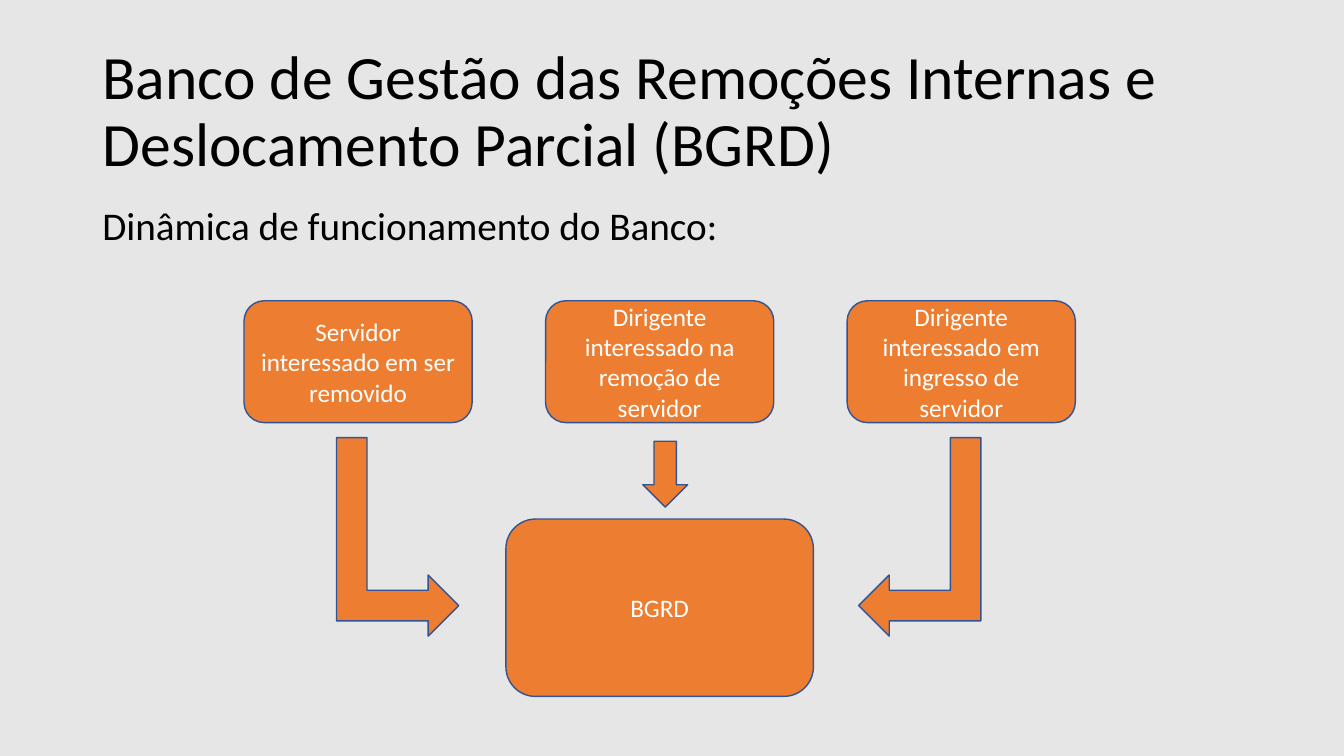
from dataclasses import dataclass

from pptx import Presentation
from pptx.dml.color import RGBColor as Rgb
from pptx.enum.shapes import MSO_SHAPE as Kind
from pptx.enum.text import MSO_ANCHOR as Anchor, PP_ALIGN as Align
from pptx.oxml.ns import qn
from pptx.shapes.autoshape import Shape
from pptx.slide import Slide
from pptx.util import Cm, Pt


@dataclass(frozen=True)
class Theme:
    font: str = "Calibri"
    back: str = "E7E6E6"
    fill: str = "ED7D31"
    line: str = "325491"
    dark: str = "000000"
    light: str = "FFFFFF"
    title: int = 44
    lead: int = 28
    label: int = 18


@dataclass(frozen=True)
class Part:
    kind: Kind
    left: float
    top: float
    width: float
    height: float
    text: str = ""
    turn: int = 0
    flip: bool = False


THEME = Theme()

# Three sources in an even row, above the bank
ROW_LEFT, ROW_STEP = 6.15, 7.6
SOURCES = (
    "Servidor interessado em ser removido",
    "Dirigente interessado na remoção de servidor",
    "Dirigente interessado em ingresso de servidor",
)
BANK = Part(Kind.ROUNDED_RECTANGLE, 12.75, 13.08, 7.75, 4.47, "BGRD")
BOXES = [
    Part(Kind.ROUNDED_RECTANGLE, ROW_LEFT + i * ROW_STEP, 7.58, 5.75, 3.07, text)
    for i, text in enumerate(SOURCES)
]

# Arrows from the sources to the bank
ARROWS = [
    Part(Kind.BENT_UP_ARROW, 7.52, 11.99, 5, 3.08, turn=90),
    Part(Kind.BENT_UP_ARROW, 20.68, 11.99, 5, 3.08, turn=270, flip=True),
    Part(Kind.DOWN_ARROW, 16.2, 11.12, 1.13, 1.66),
]


def write(shape: Shape, text: str, size: int, color: str,
          align: Align, anchor: Anchor, gap: float = 1, before: int = 0) -> None:
    frame = shape.text_frame
    frame.word_wrap = True
    frame.vertical_anchor = anchor
    para = frame.paragraphs[0]
    para.alignment = align
    para.line_spacing = gap
    para.space_before = Pt(before)
    run = para.add_run()
    run.text = text
    run.font.name = THEME.font
    run.font.size = Pt(size)
    run.font.color.rgb = Rgb.from_string(color)


def draw(slide: Slide, part: Part) -> None:
    shape = slide.shapes.add_shape(
        part.kind, Cm(part.left), Cm(part.top), Cm(part.width), Cm(part.height))
    shape.shadow.inherit = False
    shape.fill.solid()
    shape.fill.fore_color.rgb = Rgb.from_string(THEME.fill)
    shape.line.color.rgb = Rgb.from_string(THEME.line)
    shape.line.width = Pt(1)
    shape.rotation = part.turn
    if part.flip:
        shape.element.spPr.find(qn("a:xfrm")).set("flipH", "1")
    if part.text:
        write(shape, part.text, THEME.label, THEME.light, Align.CENTER, Anchor.MIDDLE)


def main() -> None:
    deck = Presentation()
    deck.slide_width, deck.slide_height = Cm(33.87), Cm(19.05)
    slide = deck.slides.add_slide(deck.slide_layouts.get_by_name("Title Only"))
    slide.background.fill.solid()
    slide.background.fill.fore_color.rgb = Rgb.from_string(THEME.back)

    # Title and lead line
    title = slide.shapes.title
    title.left, title.top = Cm(2.33), Cm(1.01)
    title.width, title.height = Cm(29.21), Cm(3.68)
    write(title, "Banco de Gestão das Remoções Internas e Deslocamento Parcial (BGRD)",
          THEME.title, THEME.dark, Align.LEFT, Anchor.MIDDLE, 0.9)
    lead = slide.shapes.add_textbox(Cm(2.33), Cm(5.07), Cm(29.21), Cm(12.09))
    write(lead, "Dinâmica de funcionamento do Banco:",
          THEME.lead, THEME.dark, Align.LEFT, Anchor.TOP, 0.9, 10)

    # Flow into the bank
    for part in [BANK, *BOXES, *ARROWS]:
        draw(slide, part)

    deck.save("out.pptx")


if __name__ == "__main__":
    main()
